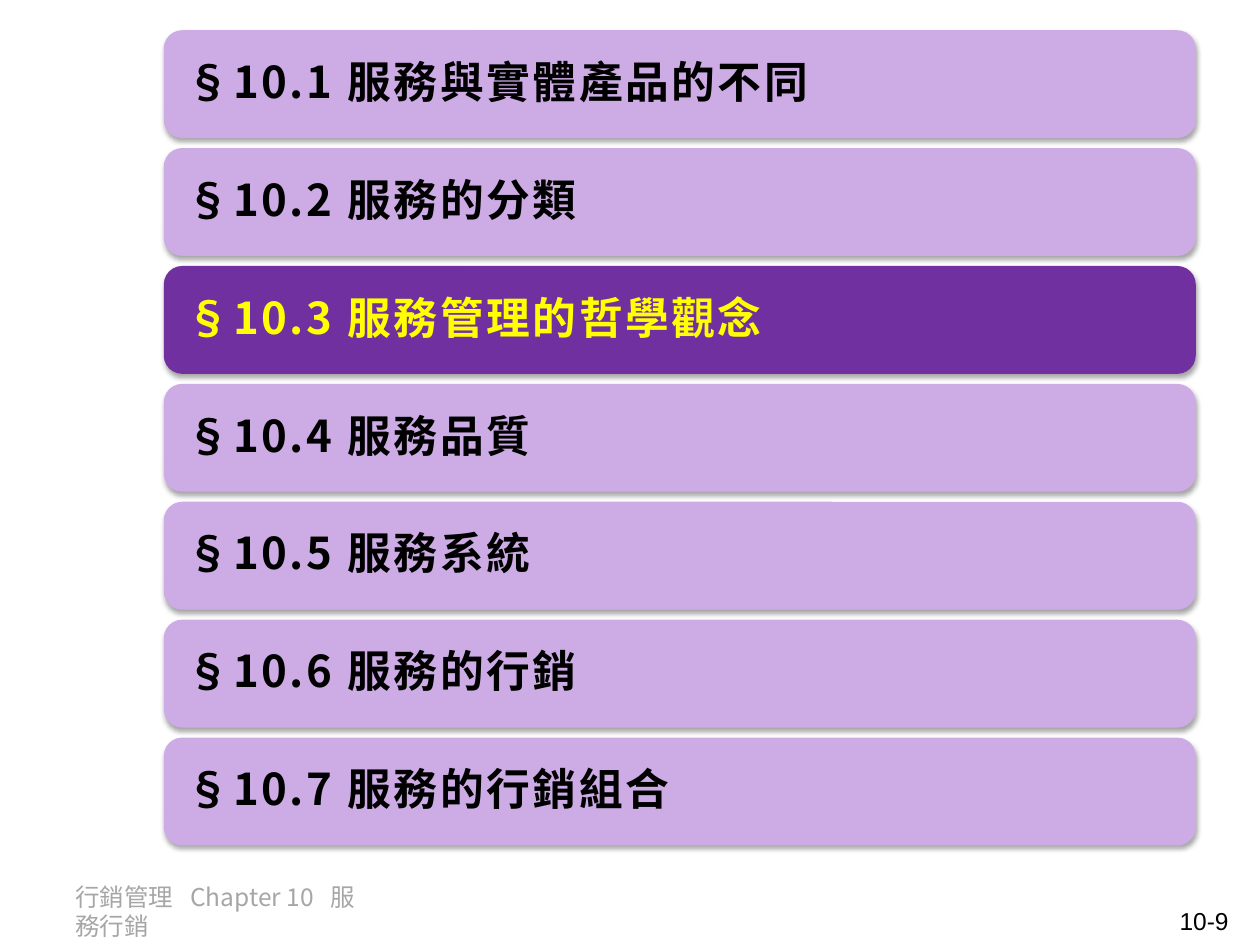
from lxml import etree
from pptx import Presentation
from pptx.dml.color import RGBColor
from pptx.enum.shapes import MSO_SHAPE
from pptx.enum.text import MSO_ANCHOR, PP_ALIGN
from pptx.oxml import parse_xml
from pptx.oxml.ns import nsdecls, qn
from pptx.util import Inches, Pt

ROUNDED = MSO_SHAPE.ROUNDED_RECTANGLE
MIDDLE, TOP = MSO_ANCHOR.MIDDLE, MSO_ANCHOR.TOP
LEFT, RIGHT = PP_ALIGN.LEFT, PP_ALIGN.RIGHT

CJK, LATIN = "Noto Sans CJK SC", "Arial"
SECTIONS = ["服務與實體產品的不同", "服務的分類", "服務管理的哲學觀念", "服務品質",
            "服務系統", "服務的行銷", "服務的行銷組合"]
CURRENT = 3
NORMAL_STYLE = {"fill": "CDACE6", "ink": "000000"}
CURRENT_STYLE = {"fill": "7030A0", "ink": "FFFF00"}


def color(value):
    return RGBColor.from_string(value)


def set_all(target, values):
    for key, value in values.items():
        setattr(target, key, value)


def add_run(paragraph, text, font, size, ink, bold=False, spacing=0):
    run = paragraph.add_run()
    run.text = text
    set_all(run.font, {"name": font, "size": Pt(size), "bold": bold})
    run.font.color.rgb = color(ink)
    properties = run.font._element
    etree.SubElement(properties, qn("a:ea")).set("typeface", CJK)
    if spacing:
        properties.set("spc", str(int(spacing * 100)))


def add_soft_shadow(bar):
    bar.shadow.inherit = False
    bar._element.spPr.find(qn("a:effectLst")).append(parse_xml(
        f'<a:outerShdw {nsdecls("a")} blurRad="{Pt(3.1)}" dist="{Pt(1.8)}" '
        'dir="5400000" rotWithShape="0"><a:srgbClr val="000000">'
        '<a:alpha val="35000"/></a:srgbClr></a:outerShdw>'))


def add_section_bar(slide, box, number, title, style):
    bar = slide.shapes.add_shape(ROUNDED, *map(Inches, box))
    bar.adjustments[0] = 0.17
    bar.fill.solid()
    bar.fill.fore_color.rgb = color(style["fill"])
    bar.line.fill.background()
    add_soft_shadow(bar)

    # Section number and title
    frame = bar.text_frame
    set_all(frame, {"word_wrap": True, "vertical_anchor": MIDDLE,
                    "margin_left": Inches(0.14), "margin_right": Inches(0.14),
                    "margin_top": Inches(0.1), "margin_bottom": Inches(0.1)})
    heading = frame.paragraphs[0]
    set_all(heading, {"alignment": LEFT, "line_spacing": 0.9})
    space_after = etree.SubElement(heading._p.get_or_add_pPr(), qn("a:spcAft"))
    etree.SubElement(space_after, qn("a:spcPct")).set("val", "35000")
    for text, font in ((f"§10.{number} ", CJK), (title, LATIN)):
        add_run(heading, text, font, 25, style["ink"], bold=True, spacing=1.5)


def add_section_list(slide, box, gap=0.08):
    left, top, width, height = box
    pitch = (height + gap) / len(SECTIONS)
    for row, title in enumerate(SECTIONS):
        number = row + 1
        style = CURRENT_STYLE if number == CURRENT else NORMAL_STYLE
        bar_box = (left, top + row * pitch, width, pitch - gap)
        add_section_bar(slide, bar_box, number, title, style)


def add_footer_text(slide, box, text, font, ink, alignment):
    label = slide.shapes.add_textbox(*map(Inches, box))
    set_all(label.text_frame, {"word_wrap": True, "vertical_anchor": TOP})
    line = label.text_frame.paragraphs[0]
    line.alignment = alignment
    add_run(line, text, font, 14, ink)


def main():
    deck = Presentation()
    set_all(deck, {"slide_width": Inches(10), "slide_height": Inches(7.5)})
    slide = deck.slides.add_slide(deck.slide_layouts[6])

    # Footer: course title and page number
    add_footer_text(slide, (0.5, 6.95, 2.45, 0.4),
                    "行銷管理   Chapter 10   服務行銷", CJK, "A6A6A6", LEFT)
    add_footer_text(slide, (7.52, 7.14, 2.33, 0.29), "10-9", LATIN, "000000", RIGHT)

    # Chapter outline
    add_section_list(slide, (1.3, 0.24, 8.19, 6.47))
    deck.save("out.pptx")


if __name__ == "__main__":
    main()
